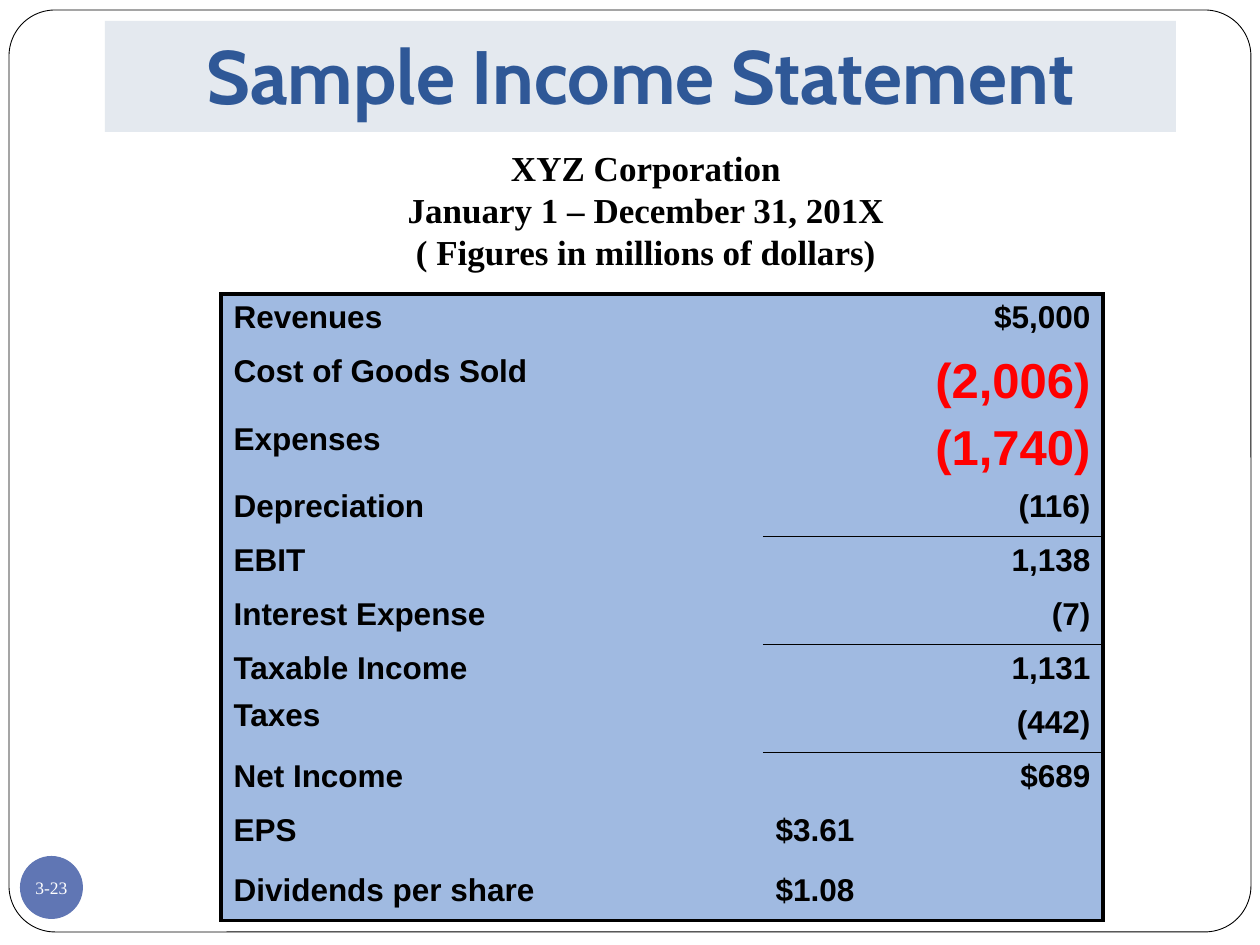
from lxml.etree import SubElement
from pptx import Presentation
from pptx.dml.color import RGBColor
from pptx.enum.shapes import MSO_SHAPE
from pptx.enum.text import MSO_ANCHOR, PP_ALIGN
from pptx.oxml import parse_xml
from pptx.oxml.ns import nsdecls, qn
from pptx.util import Emu, Pt

PX = 914400 // 126

BLACK = RGBColor(0x00, 0x00, 0x00)
WHITE = RGBColor(0xFF, 0xFF, 0xFF)
RED = RGBColor(0xFF, 0x00, 0x00)
NAVY = RGBColor(0x2F, 0x58, 0x97)
PALE_GREY = RGBColor(0xE4, 0xE9, 0xEF)
BADGE_BLUE = RGBColor(0x60, 0x76, 0xB4)
TABLE_BLUE = RGBColor(0xA0, 0xBA, 0xE1)

ROW_HEIGHT = 54
TALL_ROWS = {"Cost of Goods Sold": 67, "Expenses": 67, "EPS": 60}
HIGHLIGHTED = {"Cost of Goods Sold", "Expenses"}
PER_SHARE = {"EPS", "Dividends per share"}
RULED_BELOW = {"Depreciation", "Interest Expense", "Taxes"}
STATEMENT = [
    ("Revenues", "$5,000"),
    ("Cost of Goods Sold", "(2,006)"),
    ("Expenses", "(1,740)"),
    ("Depreciation", "(116)"),
    ("EBIT", "1,138"),
    ("Interest Expense", "(7)"),
    ("Taxable Income", "1,131"),
    ("Taxes", "(442)"),
    ("Net Income", "$689"),
    ("EPS", "$3.61"),
    ("Dividends per share", "$1.08"),
]
HEADING = [
    "XYZ Corporation",
    "January 1 – December 31, 201X",
    "( Figures in millions of dollars)",
]


def px(*lengths):
    return [Emu(length * PX) for length in lengths]


def style_para(para, font, size, color, bold=True, align=PP_ALIGN.CENTER):
    para.alignment = align
    para.font.name = font
    para.font.size = Pt(size)
    para.font.bold = bold
    para.font.color.rgb = color


def add_panel(page, kind, bounds, fill, line=None):
    shape = page.shapes.add_shape(kind, *px(*bounds))
    shape.shadow.inherit = False
    shape.fill.solid()
    shape.fill.fore_color.rgb = fill
    if line is None:
        shape.line.fill.background()
    else:
        shape.line.color.rgb = line
        shape.line.width = Pt(0.5)
    return shape


def add_frame(page):
    frame = add_panel(page, MSO_SHAPE.ROUNDED_RECTANGLE, (9, 10, 1242, 922), WHITE, BLACK)
    frame.adjustments[0] = 0.05


def add_page_number(page, number):
    badge = add_panel(page, MSO_SHAPE.OVAL, (20, 856, 63, 63), BADGE_BLUE)
    text = badge.text_frame
    text.margin_left = text.margin_right = text.margin_top = text.margin_bottom = 0
    text.word_wrap = False
    text.vertical_anchor = MSO_ANCHOR.MIDDLE
    text.text = number
    style_para(text.paragraphs[0], "Times New Roman", 10, WHITE, bold=False)


def add_title(page, title):
    banner = add_panel(page, MSO_SHAPE.RECTANGLE, (105, 21, 1071, 111), PALE_GREY)
    text = banner.text_frame
    text.word_wrap = True
    text.vertical_anchor = MSO_ANCHOR.BOTTOM
    text.margin_bottom = text.margin_left
    text.text = title
    style_para(text.paragraphs[0], "Cabin", 43.2, NAVY)


def add_heading(page, lines):
    text = page.shapes.add_textbox(*px(273, 140, 746, 139)).text_frame
    text.word_wrap = True
    text.text = "\n".join(lines)
    for para in text.paragraphs:
        style_para(para, "Times New Roman", 20, BLACK)
        para.line_spacing = Pt(24)


def set_borders(cell, widths):
    """Draw the sides named in widths (points) and clear the others."""
    properties = cell._tc.get_or_add_tcPr()
    for index, side in enumerate("LRTB"):
        border = parse_xml(f'<a:ln{side} {nsdecls("a")}/>')
        if side in widths:
            border.set("w", str(Pt(widths[side])))
            fill = SubElement(border, qn("a:solidFill"))
            SubElement(fill, qn("a:srgbClr")).set("val", str(BLACK))
        else:
            SubElement(border, qn("a:noFill"))
        properties.insert(index, border)


def fill_cell(cell, content, size, color, align):
    cell.fill.solid()
    cell.fill.fore_color.rgb = TABLE_BLUE
    cell.text = content
    style_para(cell.text_frame.paragraphs[0], "Arial", size, color, align=align)


def statement_borders(row, column):
    outer, rule = 2.25, 1
    widths = {"R" if column else "L": outer}
    if row == 0:
        widths["T"] = outer
    elif column and STATEMENT[row - 1][0] in RULED_BELOW:
        widths["T"] = rule
    if row == len(STATEMENT) - 1:
        widths["B"] = outer
    elif column and STATEMENT[row][0] in RULED_BELOW:
        widths["B"] = rule
    return widths


def add_statement(page):
    heights = [TALL_ROWS.get(label, ROW_HEIGHT) for label, _ in STATEMENT]
    bounds = px(221, 294, 882, sum(heights))
    table = page.shapes.add_table(len(STATEMENT), 2, *bounds).table
    table.first_row = table.horz_banding = False
    table.columns[0].width, table.columns[1].width = px(542, 340)
    for row, (label, amount) in enumerate(STATEMENT):
        table.rows[row].height = px(heights[row])[0]
        label_cell, amount_cell = table.cell(row, 0), table.cell(row, 1)
        fill_cell(label_cell, label, 18, BLACK, PP_ALIGN.LEFT)
        size, color = (28, RED) if label in HIGHLIGHTED else (18, BLACK)
        align = PP_ALIGN.LEFT if label in PER_SHARE else PP_ALIGN.RIGHT
        fill_cell(amount_cell, amount, size, color, align)
        if label == "Taxes":
            label_cell.margin_top = label_cell.margin_bottom = 0
        for column, cell in enumerate((label_cell, amount_cell)):
            set_borders(cell, statement_borders(row, column))


def main():
    deck = Presentation()
    deck.slide_width, deck.slide_height = px(1260, 945)
    page = deck.slides.add_slide(deck.slide_layouts[6])
    add_frame(page)
    add_page_number(page, "3-23")
    add_title(page, "Sample Income Statement")
    add_statement(page)
    add_heading(page, HEADING)
    deck.save("out.pptx")


if __name__ == "__main__":
    main()
